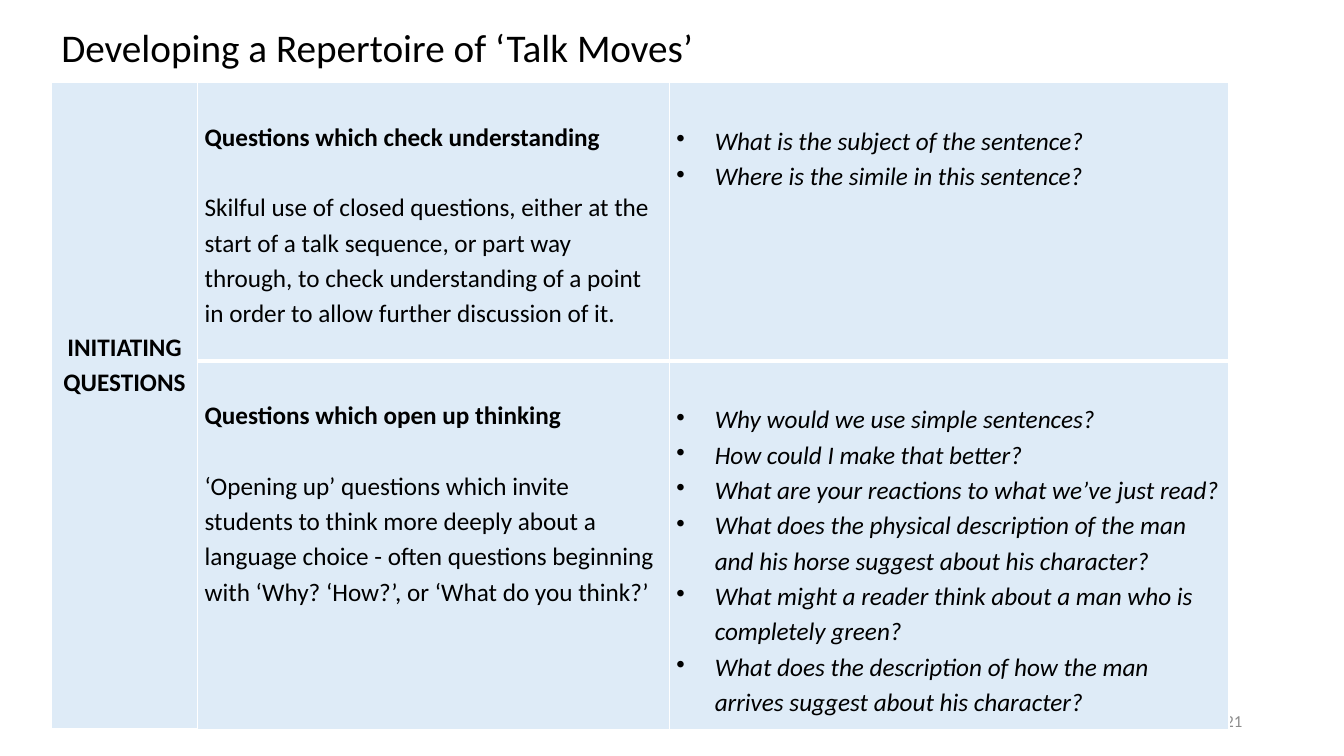
"""Build the slide on initiating questions within a repertoire of talk moves."""
from pptx import Presentation
from pptx.dml.color import RGBColor
from pptx.enum.text import MSO_ANCHOR, PP_ALIGN
from pptx.oxml import parse_xml
from pptx.oxml.ns import nsdecls
from pptx.util import Inches, Pt

COLORS = {"text": "000000", "number": "8C8C8C", "cell": "DEEBF7", "border": "FFFFFF"}
COLUMN_WIDTHS = [1.45, 4.68, 5.55]
ROW_HEIGHTS = [2.76, 3.66]
TABLE_LEFT, TABLE_TOP = 0.51, 0.82
BULLET_INDENT = Inches(0.38)

MOVES = [
    (
        "Questions which check understanding",
        "Skilful use of closed questions, either at the start of a talk sequence, or part way "
        "through, to check understanding of a point in order to allow further discussion of it.",
        [
            "What is the subject of the sentence?",
            "Where is the simile in this sentence?",
        ],
    ),
    (
        "Questions which open up thinking",
        "‘Opening up’ questions which invite students to think more deeply about a language "
        "choice - often questions beginning with ‘Why? ‘How?’, or ‘What do you think?’",
        [
            "Why would we use simple sentences?",
            "How could I make that better?",
            "What are your reactions to what we’ve just read?",
            "What does the physical description of the man and his horse suggest about his character?",
            "What might a reader think about a man who is completely green?",
            "What does the description of how the man arrives suggest about his character?",
        ],
    ),
]


def write(text_frame, lines, size=18, color="text", bold=False, italic=False, spacing=1.15):
    """Fill a text frame with one paragraph per line and return the paragraphs."""
    text_frame.text = "\n".join(lines)
    text_frame.word_wrap = True
    for paragraph in text_frame.paragraphs:
        paragraph.line_spacing = spacing
        font = paragraph.font
        font.name, font.size, font.bold, font.italic = "Calibri", Pt(size), bold, italic
        font.color.rgb = RGBColor.from_string(COLORS[color])
    return text_frame.paragraphs


presentation = Presentation()
presentation.slide_width, presentation.slide_height = Inches(13.33), Inches(7.5)
slide = presentation.slides.add_slide(presentation.slide_layouts[6])

title = slide.shapes.add_textbox(Inches(TABLE_LEFT), Inches(0.23), Inches(11.5), Inches(0.55))
write(title.text_frame, ["Developing a Repertoire of ‘Talk Moves’"], size=28, spacing=0.9)

number = slide.shapes.add_textbox(Inches(9.42), Inches(6.95), Inches(3), Inches(0.4))
number.text_frame.vertical_anchor = MSO_ANCHOR.MIDDLE
write(number.text_frame, ["21"], size=12, color="number", spacing=1)[0].alignment = PP_ALIGN.RIGHT

table = slide.shapes.add_table(
    len(ROW_HEIGHTS), len(COLUMN_WIDTHS), Inches(TABLE_LEFT), Inches(TABLE_TOP),
    Inches(sum(COLUMN_WIDTHS)), Inches(sum(ROW_HEIGHTS)),
).table
table.first_row = table.horz_banding = False
for column, width in zip(table.columns, COLUMN_WIDTHS):
    column.width = Inches(width)
for row, height in zip(table.rows, ROW_HEIGHTS):
    row.height = Inches(height)

for row_index, row in enumerate(table.rows):
    for cell in row.cells:
        cell.margin_left = cell.margin_right = Inches(0.07)
        cell.margin_top = cell.margin_bottom = 0
        cell.fill.solid()
        cell.fill.fore_color.rgb = RGBColor.from_string(COLORS["cell"])
        properties = cell._tc.get_or_add_tcPr()
        divider = {(0, "B"): 3, (1, "T"): 3}
        for position, side in enumerate("LRTB"):
            width = Pt(divider.get((row_index, side), 1))
            properties.insert(position, parse_xml(
                f'<a:ln{side} {nsdecls("a")} w="{width}"><a:solidFill>'
                f'<a:srgbClr val="{COLORS["border"]}"/></a:solidFill></a:ln{side}>'
            ))

category = table.cell(0, 0)
category.merge(table.cell(1, 0))
category.vertical_anchor = MSO_ANCHOR.MIDDLE
category.margin_bottom = Inches(0.86)
write(category.text_frame, ["INITIATING QUESTIONS"], bold=True)[0].alignment = PP_ALIGN.CENTER

for row_index, (heading, description, examples) in enumerate(MOVES):
    explanation, questions = table.cell(row_index, 1), table.cell(row_index, 2)
    explanation.margin_top, questions.margin_top = Inches(0.35), Inches(0.39)
    heading_paragraph, description_paragraph = write(explanation.text_frame, [heading, description])
    heading_paragraph.font.bold = True
    description_paragraph.space_before = Pt(25)
    for paragraph in write(questions.text_frame, examples, italic=True):
        paragraph_properties = paragraph._p.get_or_add_pPr()
        paragraph_properties.set("marL", str(BULLET_INDENT))
        paragraph_properties.set("indent", str(-BULLET_INDENT))
        bullet = parse_xml(f'<a:buChar {nsdecls("a")} char="•"/>')
        paragraph_properties.find("{*}defRPr").addprevious(bullet)

presentation.save("out.pptx")
